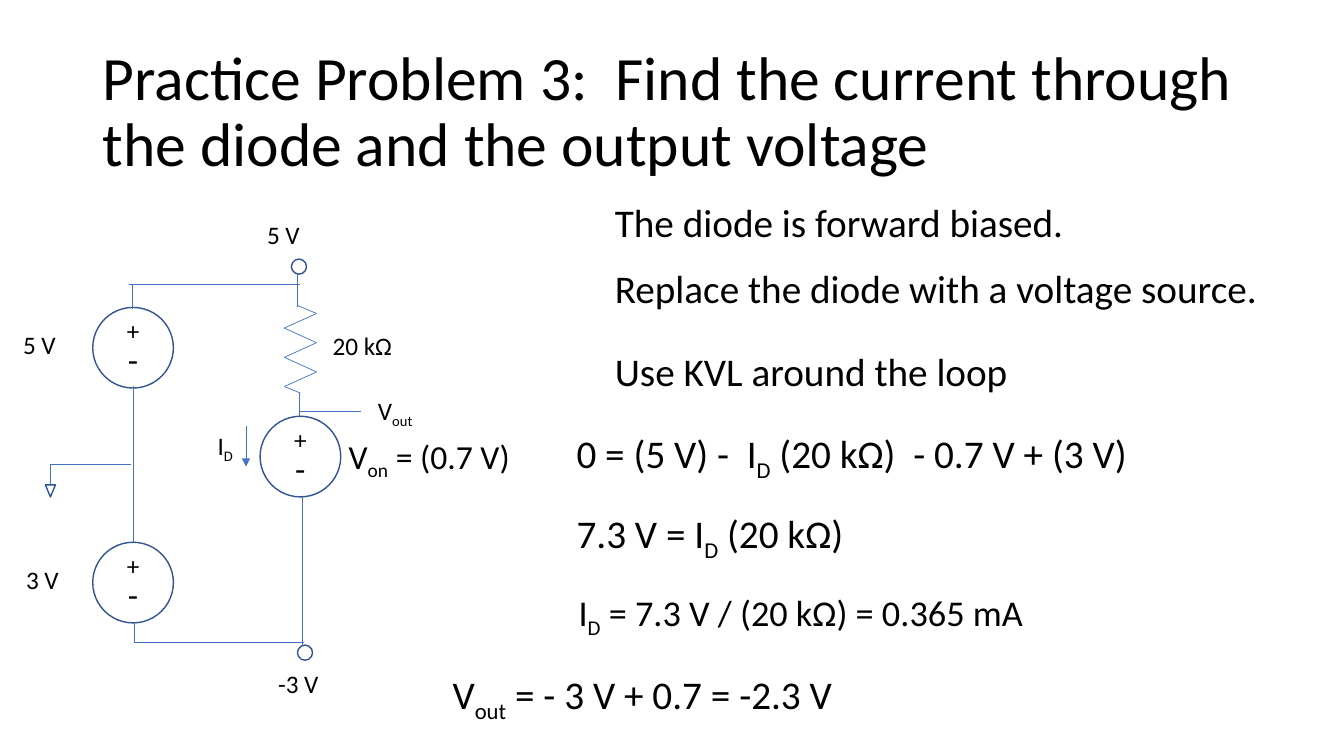
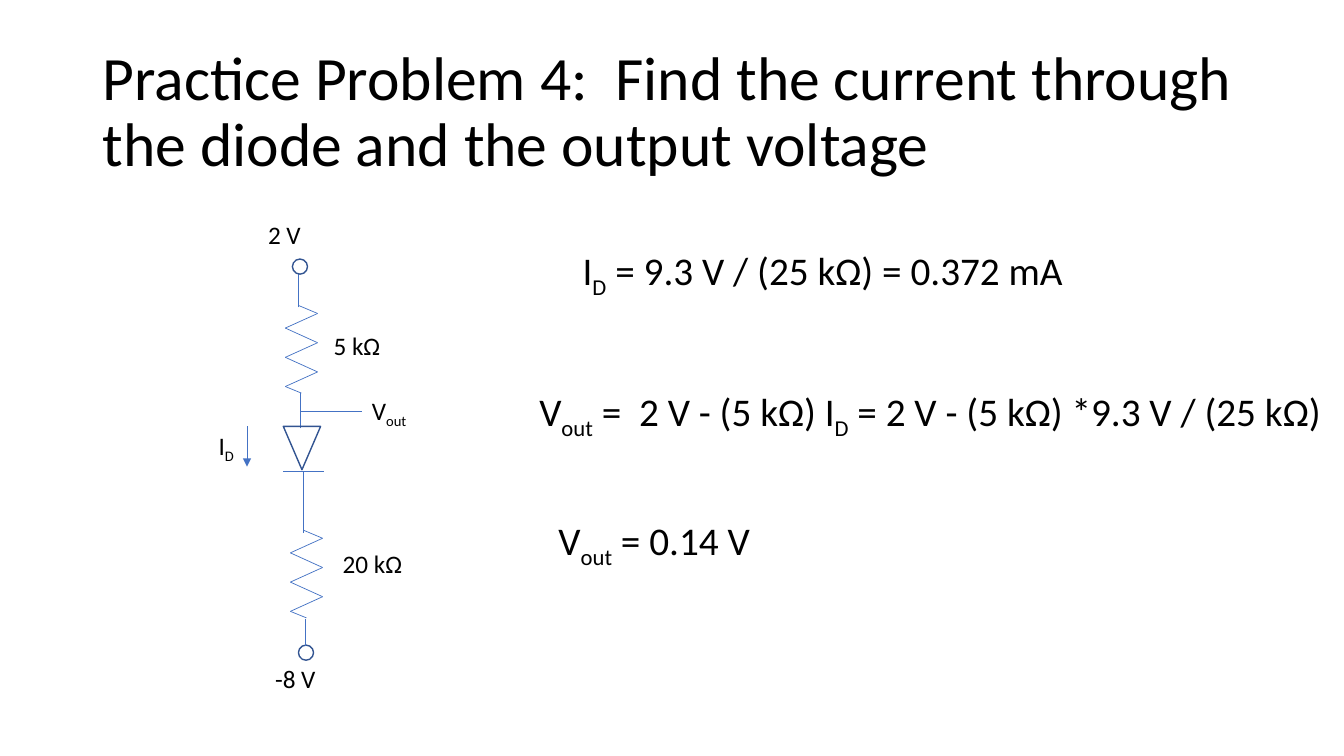
from itertools import pairwise

from lxml.etree import SubElement
from pptx import Presentation
from pptx.dml.color import RGBColor
from pptx.enum.shapes import MSO_CONNECTOR, MSO_SHAPE
from pptx.enum.text import MSO_ANCHOR
from pptx.oxml.ns import qn
from pptx.util import Inches, Pt


def color(code):
    return RGBColor.from_string(code)


class Deck:
    font = "Calibri"
    ink, paper = "000000", "FFFFFF"
    wire_hue, edge = "4472C4", "325491"

    def __init__(self):
        self.prs = Presentation()
        self.prs.slide_width = Inches(13.33)
        self.prs.slide_height = Inches(7.5)

    def page(self, title):
        self.slide = self.prs.slides.add_slide(self.prs.slide_layouts[6])
        self.shapes = self.slide.shapes
        self.text(title, 0.92, 0.4, 11.5, 1.45, size=44, lead=0.9,
                  anchor=MSO_ANCHOR.MIDDLE)

    def group(self):
        """Later elements go into a new group."""
        self.shapes = self.slide.shapes.add_group_shape().shapes

    def text(self, words, x, y, w=1.18, h=0.4, size=18, lead=None, before=None,
             anchor=MSO_ANCHOR.TOP):
        """Write text; a part between underscores is a subscript."""
        box = self.shapes.add_textbox(Inches(x), Inches(y), Inches(w), Inches(h))
        frame = box.text_frame
        frame.word_wrap = True
        frame.vertical_anchor = anchor
        para = frame.paragraphs[0]
        if lead:
            para.line_spacing = lead
        if before:
            para.space_before = Pt(before)
        for i, part in enumerate(words.split("_")):
            run = para.add_run()
            run.text = part
            run.font.name = self.font
            run.font.size = Pt(size)
            run.font.color.rgb = color(self.ink)
            if i % 2:
                run._r.get_or_add_rPr().set("baseline", "-25000")

    def step(self, words, x, y, w, h=0.69, size=28):
        """One line of the worked solution."""
        self.text(words, x, y, w, h, size=size, lead=0.9, before=10)

    def wire(self, *points, arrow=False):
        """Join the points with straight lines."""
        for start, end in pairwise(points):
            line = self.shapes.add_connector(
                MSO_CONNECTOR.STRAIGHT, *map(Inches, start + end))
            line.line.color.rgb = color(self.wire_hue)
            line.line.width = Pt(0.5)
            if arrow:
                SubElement(line.line._get_or_add_ln(), qn("a:tailEnd"), type="triangle")
            SubElement(line._element.spPr, qn("a:effectLst"))

    def shape(self, kind, x, y, w, h, fill=None):
        item = self.shapes.add_shape(kind, Inches(x), Inches(y), Inches(w), Inches(h))
        item.shadow.inherit = False
        item.line.color.rgb = color(self.edge)
        item.line.width = Pt(1)
        if fill:
            item.fill.solid()
            item.fill.fore_color.rgb = color(fill)
        else:
            item.fill.background()
        return item

    def ring(self, x, y, size=0.15):
        self.shape(MSO_SHAPE.OVAL, x, y, size, size, self.paper)

    def arrowhead(self, x, y, w, h):
        """Hollow triangle that points down."""
        self.shape(MSO_SHAPE.ISOSCELES_TRIANGLE, x, y, w, h).rotation = 180

    def source(self, x, y):
        self.ring(x, y, 0.8)
        self.text("+", x + 0.24, y + 0.03, 0.36)
        self.text("-", x + 0.25, y + 0.26, 0.36, 0.5, size=24)

    def coil(self, x, y):
        """Resistor zigzag; x is its left edge."""
        turns = [(x + (0 if i % 2 else 0.32), y + 0.08 + 0.145 * i) for i in range(6)]
        self.wire((x + 0.13, y), *turns, (x + 0.16, y + 0.87))

    def branch(self, x, top, ohms, foot, tap, foot_at):
        """Right-hand column down to the output tap, with its end terminals."""
        self.text(top, x - 0.4, 2.13)
        self.wire((x, 3.05), (x, 2.68))
        self.coil(x - 0.13, 3.03)
        self.text(ohms, x + 0.25, 3.23)
        self.wire((x + 0.02, 4.25), (x + 0.02, 3.9))
        self.wire((x + 0.03, 4.08), (x + 0.63, 4.08))
        self.text("V_out_", tap, 3.87, 1.07)
        self.text("I_D_", x - 0.89, 4.22, 0.71)
        self.wire((x - 0.51, 4.23), (x - 0.51, 4.63), arrow=True)
        self.ring(x - 0.06, 2.57)
        self.ring(x, 6.4)
        self.text(foot, *foot_at)


def third(deck):
    deck.page("Practice Problem 3:  Find the current through the diode and the output voltage")

    # Left column: supplies and ground
    deck.group()
    for y, volts, x in ((3.05, "5 V", 0.13), (5.38, "3 V", 0.16)):
        deck.source(0.92, y)
        deck.text(volts, x, y + 0.17)
    deck.wire((1.32, 5.38), (1.32, 3.83))
    deck.wire((1.33, 6.18), (1.33, 6.37), (3.02, 6.37))
    deck.wire((1.28, 2.82), (2.98, 2.82))
    deck.wire((1.31, 3.07), (1.31, 2.82))
    deck.wire((1.3, 4.61), (0.5, 4.61), (0.5, 4.81))
    deck.arrowhead(0.45, 4.81, 0.1, 0.12)

    # Right column: resistor and diode drawn as a source
    deck.group()
    deck.wire((3, 4.63), (3, 6.4))
    deck.branch(2.95, "5 V", "20 kΩ", "-3 V", 3.65, (2.66, 6.58))
    deck.source(2.58, 4.13)

    # Solution
    deck.shapes = deck.slide.shapes
    deck.step("V_on_ = (0.7 V)", 3.36, 4.28, 1.85, 0.61, size=24)
    deck.step("The diode is forward biased.", 6, 1.97, 4.78, 0.61)
    deck.step("Replace the diode with a voltage source.", 6, 2.63, 6.82)
    deck.step("Use KVL around the loop", 6, 3.45, 6.82)
    deck.step("0 = (5 V) -  I_D_ (20 kΩ)  - 0.7 V + (3 V)", 5.62, 4.22, 7.71)
    deck.step("7.3 V = I_D_ (20 kΩ)", 5.62, 5.01, 3.49)
    deck.step("I_D_ = 7.3 V / (20 kΩ) = 0.365 mA", 5.64, 5.81, 4.91, 0.56, size=25.9)
    deck.step("V_out_ = - 3 V + 0.7 = -2.3 V", 4.39, 6.61, 8.43, 0.61)


def fourth(deck):
    deck.page("Practice Problem 4:  Find the current through the diode and the output voltage")

    # Circuit: resistor, diode, resistor
    deck.group()
    deck.branch(2.96, "2 V", "5 kΩ", "-8 V", 3.59, (2.63, 6.53))
    deck.arrowhead(2.81, 4.23, 0.37, 0.43)
    deck.wire((3.21, 4.68), (2.81, 4.68))
    deck.wire((3.01, 4.68), (3.01, 5.29))
    deck.coil(2.88, 5.26)
    deck.wire((3.03, 6.14), (3.03, 6.41))
    deck.text("20 kΩ", 3.3, 5.39)

    # Solution
    deck.shapes = deck.slide.shapes
    deck.step("I_D_ = 9.3 V / (25 kΩ) = 0.372 mA", 5.68, 2.4, 5.29, 0.56)
    deck.step("V_out_ =  2 V - (5 kΩ) I_D_ = 2 V - (5 kΩ) *9.3 V / (25 kΩ)",
              5.25, 3.8, 8.08, 0.83)
    deck.step("V_out_ = 0.14 V", 5.44, 5.08, 4.88, 0.75)


def main():
    deck = Deck()
    third(deck)
    fourth(deck)
    deck.prs.save("out.pptx")


if __name__ == "__main__":
    main()
